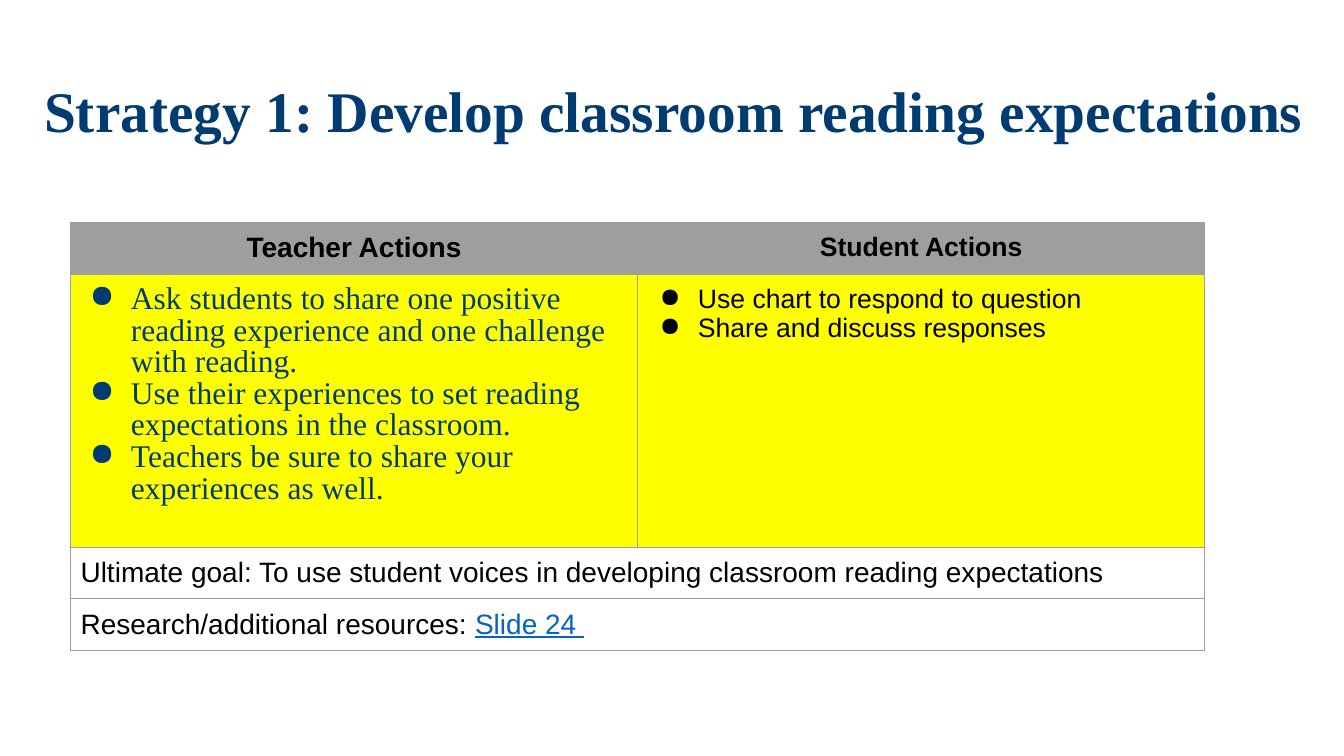
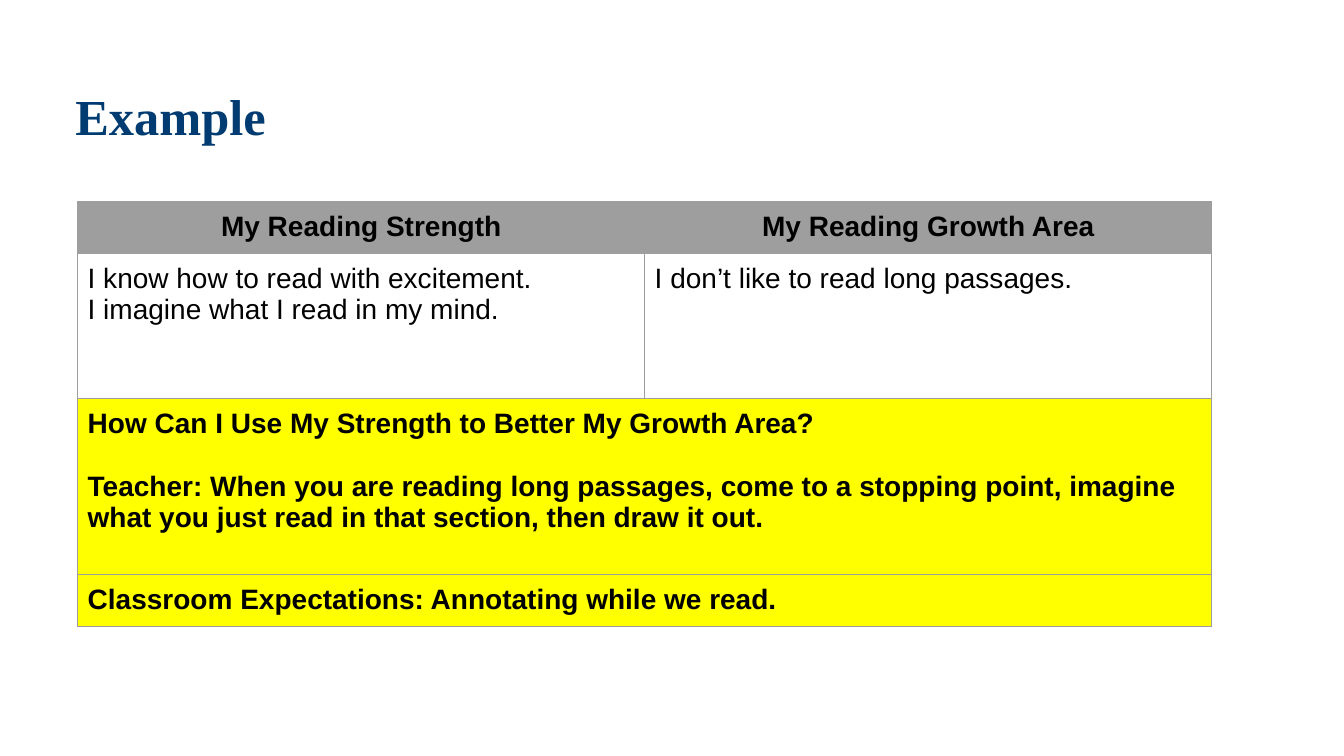
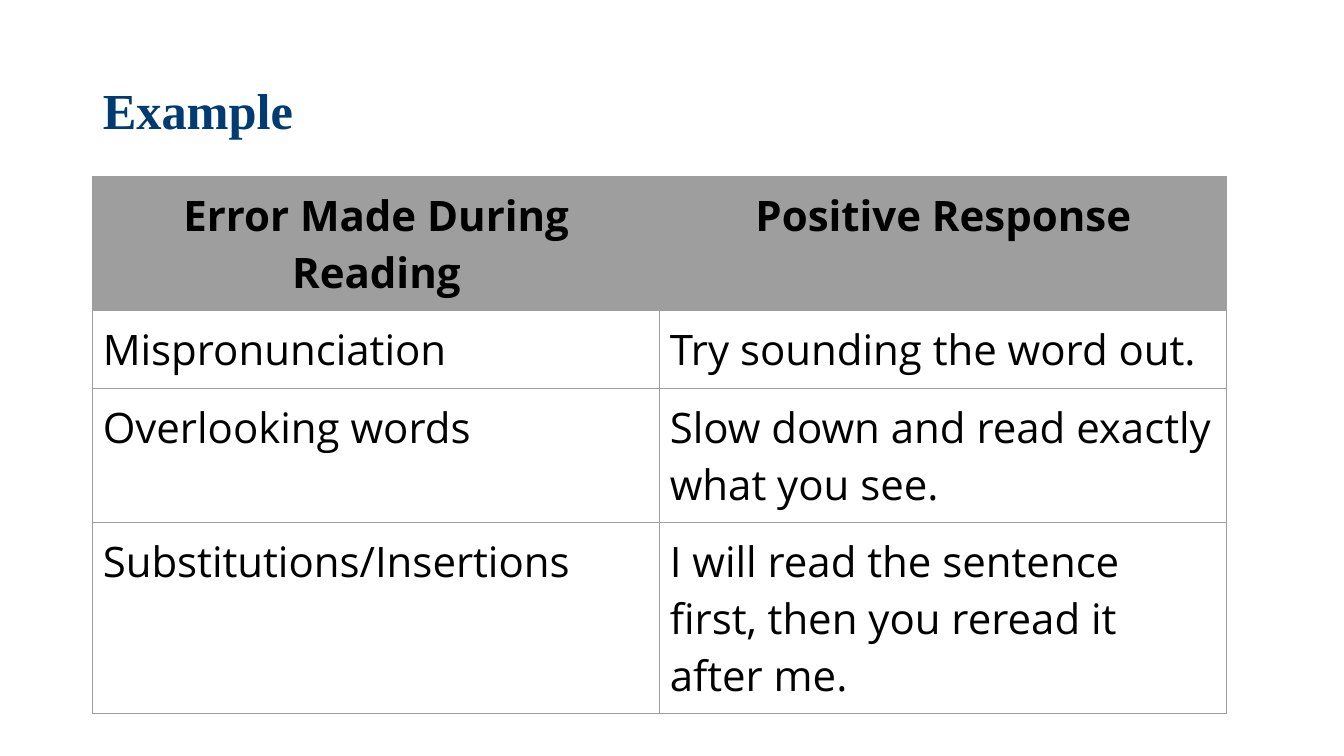
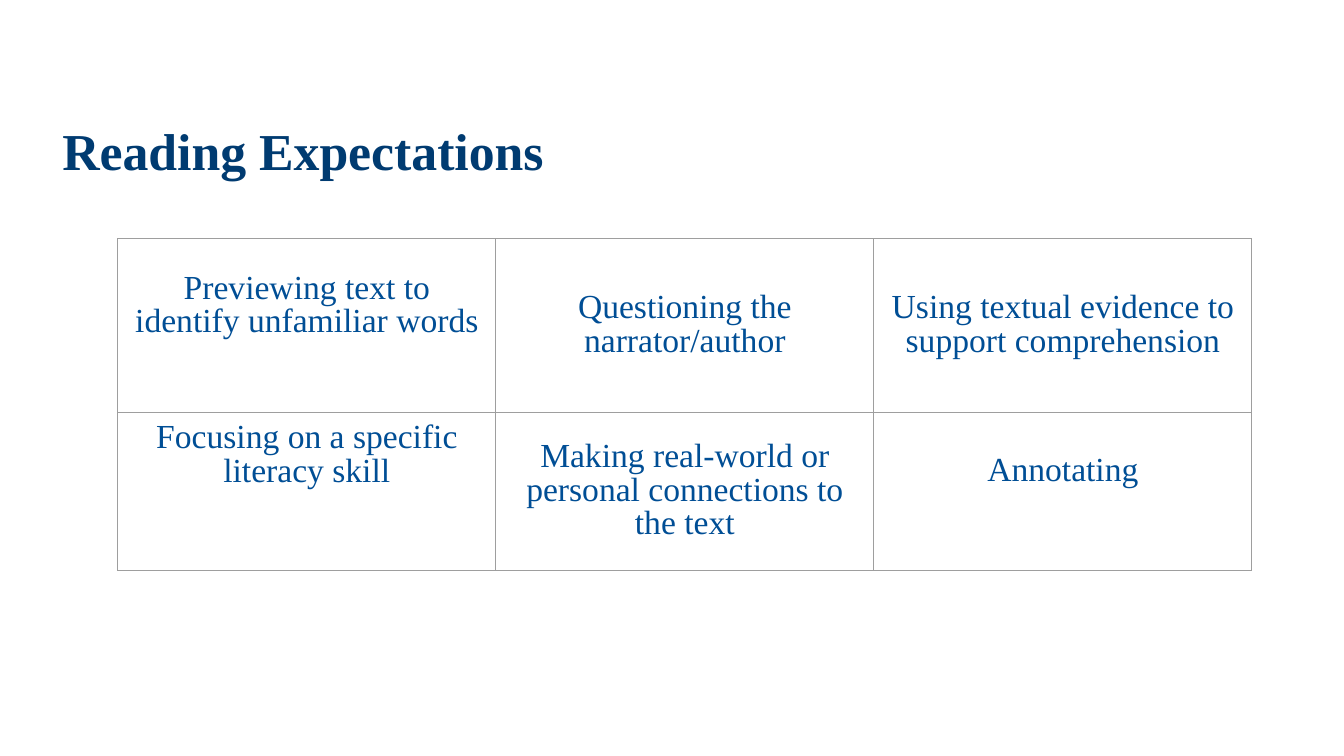
from lxml import etree
from pptx import Presentation
from pptx import util as u
from pptx.dml.color import RGBColor
from pptx.enum import text
from pptx.oxml import ns

COLORS = {"navy": "003B71", "blue": "004E95", "link": "0563C1", "gray": "9E9E9E",
          "yellow": "FFFF00", "black": "000000"}
SERIF = "Times New Roman"
LEFT, CENTER = text.PP_ALIGN.LEFT, text.PP_ALIGN.CENTER
TOP, MIDDLE = text.MSO_ANCHOR.TOP, text.MSO_ANCHOR.MIDDLE
PADDING = 0.25
TABLE_WIDTH = 28.58


def add_run(paragraph, content, color, **font_format):
    run = paragraph.add_run()
    run.text = content
    run.font.color.rgb = RGBColor.from_string(COLORS[color])
    for name, value in font_format.items():
        setattr(run.font, name, value)


def add_xml(parent, tag, **attributes):
    return etree.SubElement(parent, ns.qn(tag), {name: str(value) for name, value in attributes.items()})


BODY = {"name": "Arial", "size": 20, "color": "black", "bold": False}
HEADER = {"bold": True, "align": CENTER, "fill": "gray"}
HIGHLIGHT = {"bold": True, "fill": "yellow"}
LARGE = {"name": "Open Sans", "size": 30}
EXPECTATION = {"name": SERIF, "size": 24, "color": "blue", "align": CENTER,
               "line_spacing": 0.9, "anchor": MIDDLE}

slides = [
    {
        "title": "Strategy 1: Develop classroom reading expectations",
        "title_box": (0.86, 1.02, 32.34, 3.68),
        "title_size": 41,
        "table_at": (1.78, 5.61),
        "row_heights": [1.3, 6.88, 1.3, 1.3],
        "rows": [
            [(["Teacher Actions"], HEADER), (["Student Actions"], HEADER | {"size": 19})],
            [(["Ask students to share one positive reading experience and one challenge with reading.",
               "Use their experiences to set reading expectations in the classroom.",
               "Teachers be sure to share your experiences as well."],
              {"name": SERIF, "size": 22.5, "color": "navy", "line_spacing": 0.9,
               "fill": "yellow", "bullet_indent": 1.04}),
             (["Use chart to respond to question", "Share and discuss responses"],
              {"size": 19, "fill": "yellow", "bullet_indent": 0.97})],
            [(["Ultimate goal: To use student voices in developing classroom reading expectations"], {})],
            [(["Research/additional resources: "], {"link": "Slide 24 "})],
        ],
    },
    {
        "title": "Example",
        "title_box": (1.65, 1.17, 29.21, 3.68),
        "table_at": (1.96, 5.08),
        "row_heights": [1.3, 3.66, 4.44, 1.3],
        "rows": [
            [(["My Reading Strength"], HEADER), (["My Reading Growth Area"], HEADER)],
            [(["I know how to read with excitement.", "I imagine what I read in my mind."], {}),
             (["I don’t like to read long passages."], {})],
            [(["How Can I Use My Strength to Better My Growth Area?",
               "Teacher: When you are reading long passages, come to a stopping point, imagine "
               "what you just read in that section, then draw it out."],
              HIGHLIGHT | {"gap": 22.5})],
            [(["Classroom Expectations: Annotating while we read."], HIGHLIGHT)],
        ],
    },
    {
        "title": "Example",
        "title_box": (2.34, 1.02, 29.21, 3.68),
        "table_at": (2.34, 4.45),
        "row_heights": [3.38, 1.96, 3.38, 4.82],
        "rows": [
            [(["Error Made During Reading"], LARGE | HEADER), (["Positive Response"], LARGE | HEADER)],
            [(["Mispronunciation"], LARGE), (["Try sounding the word out."], LARGE)],
            [(["Overlooking words"], LARGE), (["Slow down and read exactly what you see."], LARGE)],
            [(["Substitutions/Insertions"], LARGE),
             (["I will read the sentence first, then you reread it after me."], LARGE)],
        ],
    },
    {
        "title": "Reading Expectations",
        "title_box": (1.32, 2.74, 15.32, 2.08),
        "title_size": 37,
        "title_spacing": 1.0,
        "title_anchor": TOP,
        "title_padding": PADDING,
        "table_at": (2.97, 6.02),
        "row_heights": [4.37, 3.98],
        "rows": [
            [(["Previewing text to identify unfamiliar words"], EXPECTATION | {"bottom": 1.25}),
             (["Questioning the narrator/author"], EXPECTATION),
             (["Using textual evidence to support comprehension"], EXPECTATION)],
            [(["Focusing on a specific literacy skill"], EXPECTATION | {"anchor": TOP}),
             (["Making real-world or personal connections to the text"], EXPECTATION),
             (["Annotating"], EXPECTATION | {"bottom": 1.25})],
        ],
    },
]

presentation = Presentation()
presentation.slide_width = u.Cm(33.87)
presentation.slide_height = u.Cm(19.05)

for content in slides:
    slide = presentation.slides.add_slide(presentation.slide_layouts[5])

    title = slide.shapes.title
    for name, value in zip(("left", "top", "width", "height"), content["title_box"]):
        setattr(title, name, u.Cm(value))
    frame = title.text_frame
    title_padding = u.Cm(content.get("title_padding", 0.13))
    frame_format = {"word_wrap": True, "auto_size": text.MSO_AUTO_SIZE.NONE,
                    "vertical_anchor": content.get("title_anchor", MIDDLE),
                    "margin_left": u.Cm(PADDING), "margin_right": u.Cm(PADDING),
                    "margin_top": title_padding, "margin_bottom": title_padding}
    for name, value in frame_format.items():
        setattr(frame, name, value)
    paragraph = frame.paragraphs[0]
    paragraph.alignment = LEFT
    paragraph.line_spacing = content.get("title_spacing", 0.9)
    add_run(paragraph, content["title"], "navy", name=SERIF, bold=True,
            size=u.Pt(content.get("title_size", 36)))

    rows, heights = content["rows"], content["row_heights"]
    column_count = len(rows[0])
    left, top = content["table_at"]
    table = slide.shapes.add_table(len(rows), column_count, u.Cm(left), u.Cm(top),
                                   u.Cm(TABLE_WIDTH), u.Cm(sum(heights))).table
    table.first_row = table.horz_banding = False

    for row_index, (cells, height) in enumerate(zip(rows, heights)):
        table.rows[row_index].height = u.Cm(height)
        for column_index in range(column_count):
            cell = table.cell(row_index, column_index)
            properties = cell._tc.get_or_add_tcPr()
            for side in "LRTB":
                line = add_xml(properties, f"a:ln{side}", w=u.Pt(0.75))
                add_xml(add_xml(line, "a:solidFill"), "a:srgbClr", val=COLORS["gray"])
            cell.fill.background()
        if len(cells) == 1:
            table.cell(row_index, 0).merge(table.cell(row_index, column_count - 1))

        for column_index, (lines, changes) in enumerate(cells):
            style = BODY | changes
            cell = table.cell(row_index, column_index)
            cell_format = {"margin_left": PADDING, "margin_right": PADDING, "margin_top": PADDING,
                           "margin_bottom": style.get("bottom", PADDING)}
            for name, value in cell_format.items():
                setattr(cell, name, u.Cm(value))
            cell.vertical_anchor = style.get("anchor", TOP)
            if "fill" in style:
                cell.fill.solid()
                cell.fill.fore_color.rgb = RGBColor.from_string(COLORS[style["fill"]])

            font_format = {"name": style["name"], "size": u.Pt(style["size"]), "bold": style["bold"]}
            for line_index, line_text in enumerate(lines):
                frame = cell.text_frame
                paragraph = frame.add_paragraph() if line_index else frame.paragraphs[0]
                paragraph.alignment = style.get("align", LEFT)
                paragraph.line_spacing = style.get("line_spacing", 1.0)
                if line_index and "gap" in style:
                    paragraph.space_before = u.Pt(style["gap"])
                if "bullet_indent" in style:
                    properties = paragraph._p.get_or_add_pPr()
                    properties.set("marL", str(u.Cm(1.27)))
                    properties.set("indent", str(-u.Cm(style["bullet_indent"])))
                    add_xml(add_xml(properties, "a:buClr"), "a:srgbClr", val=COLORS[style["color"]])
                    add_xml(properties, "a:buChar", char="●")
                add_run(paragraph, line_text, style["color"], **font_format)
                if "link" in style:
                    add_run(paragraph, style["link"], "link", underline=True, **font_format)

presentation.save("out.pptx")
